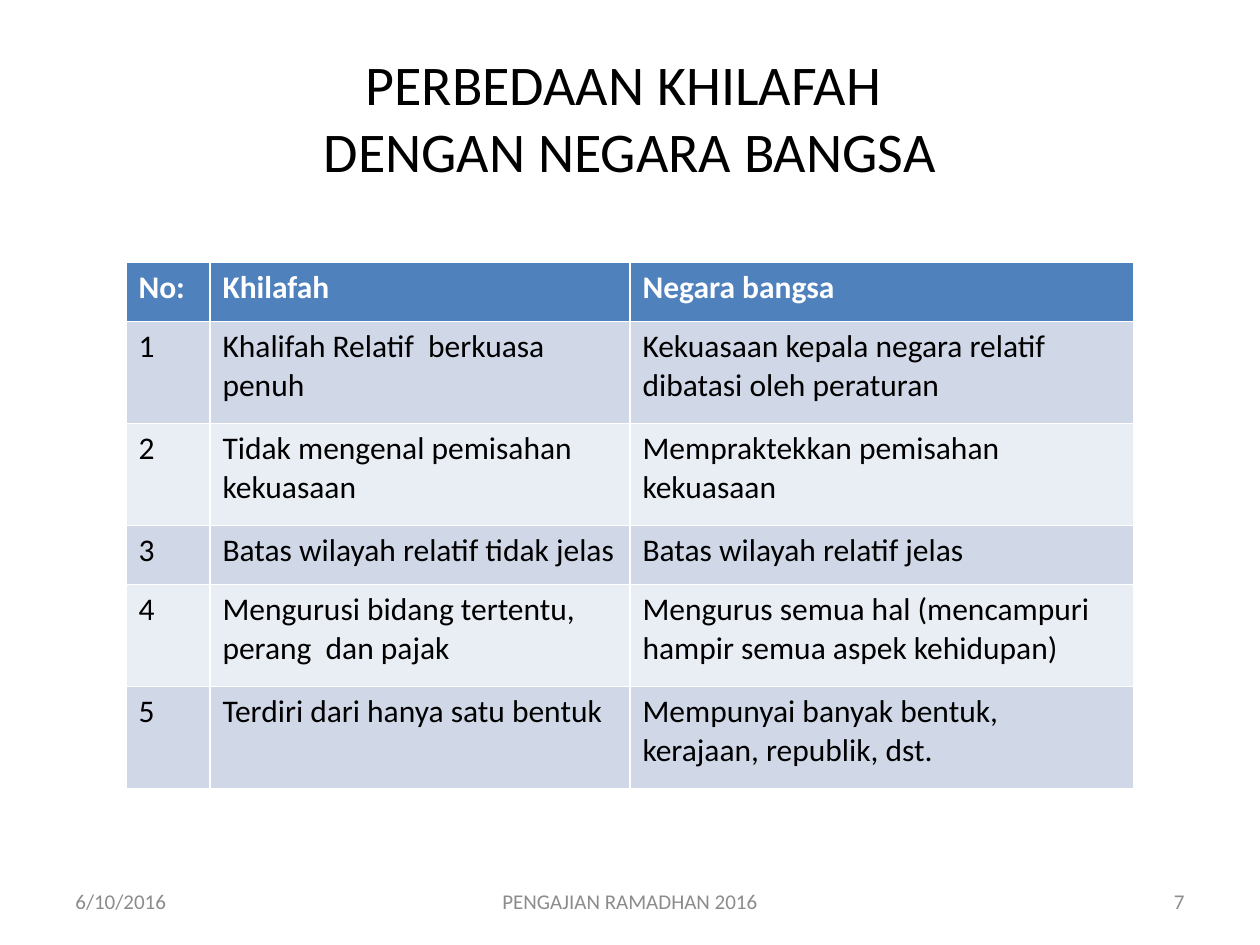
from pptx import Presentation
from pptx.dml.color import RGBColor
from pptx.enum.text import MSO_ANCHOR, PP_ALIGN
from pptx.util import Pt

LEFT, CENTER, RIGHT = PP_ALIGN.LEFT, PP_ALIGN.CENTER, PP_ALIGN.RIGHT
MIDDLE = MSO_ANCHOR.MIDDLE

WHITE = RGBColor(0xFF, 0xFF, 0xFF)
BLACK = RGBColor(0x00, 0x00, 0x00)
GRAY = RGBColor(0x8C, 0x8C, 0x8C)
BLUE = RGBColor(0x4F, 0x81, 0xBD)
BANDS = [RGBColor(0xE9, 0xED, 0xF4), RGBColor(0xD0, 0xD8, 0xE8)]

TITLE = "PERBEDAAN KHILAFAH \vDENGAN NEGARA BANGSA"
HEAD = ("No:", "Khilafah", "Negara bangsa")
ROWS = [
    ("Khalifah Relatif  berkuasa penuh",
     "Kekuasaan kepala negara relatif dibatasi oleh peraturan"),
    ("Tidak mengenal pemisahan  kekuasaan",
     "Mempraktekkan pemisahan kekuasaan"),
    ("Batas wilayah relatif tidak jelas",
     "Batas wilayah relatif jelas"),
    ("Mengurusi bidang tertentu, perang  dan pajak",
     "Mengurus semua hal (mencampuri hampir semua aspek kehidupan)"),
    ("Terdiri dari hanya satu bentuk",
     "Mempunyai banyak bentuk, kerajaan, republik, dst."),
]
WIDTHS = [48, 240, 288]
LOW, HIGH = 33.6, 58.4
HEIGHTS = [LOW, HIGH, HIGH, LOW, HIGH, HIGH]
# text, left, width, alignment
FOOTERS = [
    ("6/10/2016", 36, 168, LEFT),
    ("PENGAJIAN RAMADHAN 2016", 246, 228, CENTER),
    ("7", 516, 168, RIGHT),
]


def write(frame, text, size, color, align=LEFT, bold=False):
    frame.text = text
    para = frame.paragraphs[0]
    para.alignment = align
    style = {"name": "Calibri", "size": Pt(size), "bold": bold}
    for run in para.runs:
        for key, value in style.items():
            setattr(run.font, key, value)
        run.font.color.rgb = color


def place(shape, left, top, width, height):
    box = {"left": left, "top": top, "width": width, "height": height}
    for key, value in box.items():
        setattr(shape, key, Pt(value))


def add_grid(slide):
    cells = [HEAD] + [(str(n), *row) for n, row in enumerate(ROWS, 1)]
    grid = slide.shapes.add_table(
        len(cells), len(HEAD), Pt(72), Pt(150),
        Pt(sum(WIDTHS)), Pt(sum(HEIGHTS))).table
    for col, width in zip(grid.columns, WIDTHS):
        col.width = Pt(width)
    for r, texts in enumerate(cells):
        grid.rows[r].height = Pt(HEIGHTS[r])
        top = r == 0
        for c, text in enumerate(texts):
            cell = grid.cell(r, c)
            cell.fill.solid()
            cell.fill.fore_color.rgb = BLUE if top else BANDS[r % 2]
            write(cell.text_frame, text, 18, WHITE if top else BLACK, bold=top)


def main():
    deck = Presentation()
    deck.slide_width, deck.slide_height = Pt(720), Pt(540)
    slide = deck.slides.add_slide(deck.slide_layouts[5])

    title = slide.shapes.title
    place(title, 36, 21.6, 648, 90)
    title.text_frame.vertical_anchor = MIDDLE
    write(title.text_frame, TITLE, 32, BLACK, CENTER)

    add_grid(slide)

    for text, left, width, align in FOOTERS:
        box = slide.shapes.add_textbox(Pt(left), Pt(500.5), Pt(width), Pt(28.75))
        box.text_frame.word_wrap = True
        box.text_frame.vertical_anchor = MIDDLE
        write(box.text_frame, text, 12, GRAY, align)

    deck.save("out.pptx")


if __name__ == "__main__":
    main()
